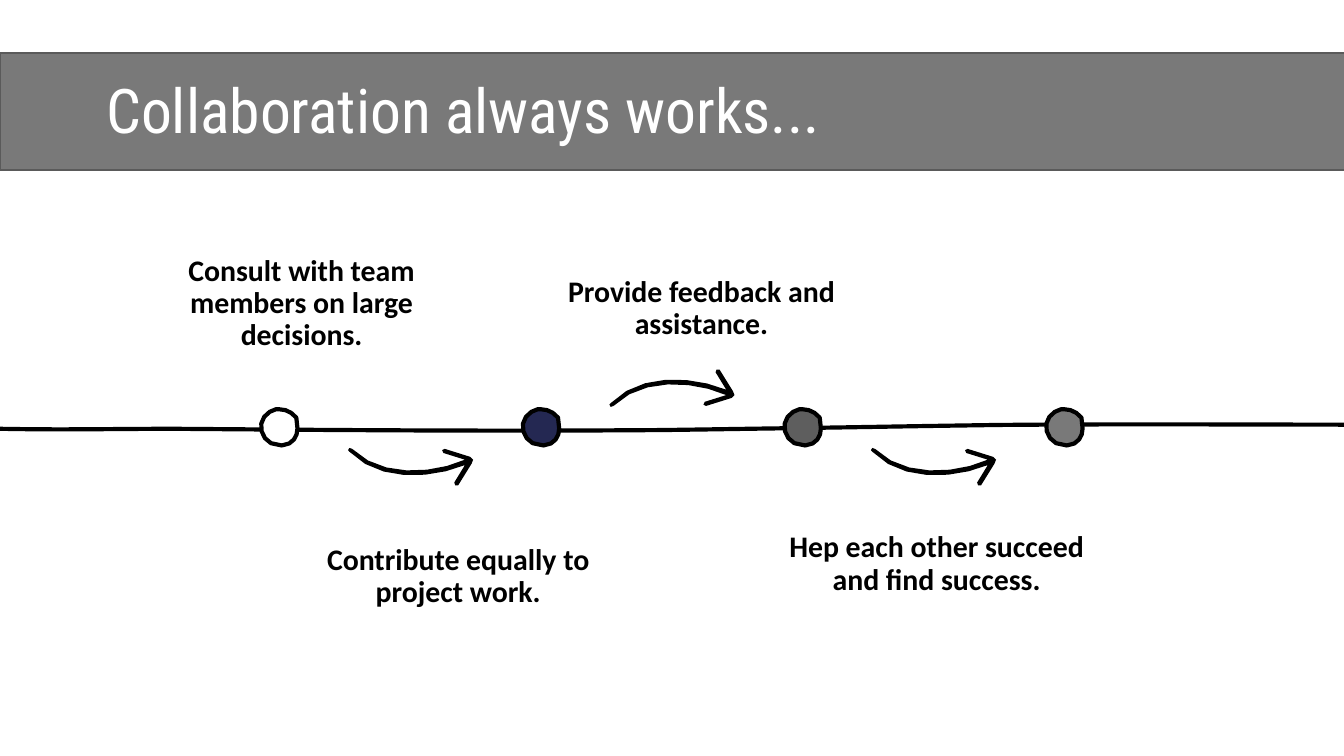
from dataclasses import dataclass
from math import dist

from pptx import Presentation
from pptx.dml.color import RGBColor
from pptx.enum.shapes import MSO_SHAPE
from pptx.enum.text import MSO_ANCHOR, MSO_AUTO_SIZE, PP_ALIGN
from pptx.shapes.autoshape import Shape
from pptx.slide import Slide
from pptx.util import Pt

Point = tuple[float, float]

COLORS = {
    "black": "000000",
    "white": "FFFFFF",
    "navy": "242852",
    "dark_gray": "5E5E5E",
    "gray": "797979",
    "bar_edge": "5A5A5A",
}

# An outline is a start point, then segments: one point is a straight line,
# three points are a Bezier curve. All coordinates are in points.
DOT_OUTLINE = [
    [(11.5, 1.1)],
    [(9.6, 1.1)],
    [(6.4, 1.7), (2.4, 4.9), (1.8, 8.8)],
    [(1.1, 12.8), (3.1, 17.3), (7, 19.3)],
    [(8.9, 19.9), (10.9, 20.5), (12.8, 20.5)],
    [(16.1, 19.9), (18, 19.3), (19.3, 17.3)],
    [(20.6, 16), (21.2, 13.4), (21.2, 11.4)],
    [(21.9, 9.5), (21.9, 6.9), (20.6, 5.6)],
    [(18, 2.4), (14.7, 1.1), (11.5, 1.1)],
]
ARROW_OUTLINE = [
    [(67, 6.5)],
    [(65.5, 5)],
    [(51.8, 0.7)],
    [(50.4, 1.4)],
    [(51.1, 2.9)],
    [(62.6, 6.5)],
    [(44.6, 14.4), (17.3, 15.8), (2.2, 0.7)],
    [(0.7, 0.2)],
    [(0, 1.4)],
    [(0.7, 2.2)],
    [(15.8, 18), (43.2, 17.3), (62.6, 9.4)],
    [(56.9, 18.7)],
    [(57.4, 20.2)],
    [(59, 20.2)],
    [(66.2, 8.6)],
]
TIMELINE_OUTLINE = [
    [(0, 229.7)],
    [(31, 230.4), (63.4, 229.7), (94.3, 229.7)],
    [(180.7, 230.4), (267.8, 231.1), (354.2, 230.4)],
    [(402.5, 229.7), (450.7, 229), (499, 228.2)],
    [(571.7, 226.8), (646.6, 227.5), (720, 227.5)],
]
STEP_LENGTH = 4
MOST_STEPS = 6
LINE_WIDTH = 2.25

DOT_COLORS = ["white", "navy", "dark_gray", "gray"]
DOT_LEFT, DOT_TOP, DOT_PITCH = 138.2, 218.2, 140.2

LABEL_FONT = {"name": "Calibri", "size": Pt(16), "bold": True}
TITLE_FONT = {"name": "Roboto Condensed", "size": Pt(33), "bold": False}


@dataclass(frozen=True)
class Label:
    text: str
    left: float
    top: float
    width: float = 191.5
    height: float = 56.2
    space_after: float = 0


@dataclass(frozen=True)
class Arrow:
    left: float
    top: float
    bends_up: bool = False


LABELS = [
    Label("Provide feedback and assistance.", 280.1, 141.1),
    Label("Contribute equally to project work.", 149.8, 284.4),
    Label("Hep each other succeed and find success.", 406.1, 277.9),
    Label("Consult with team members on large decisions.", 80.6, 129.6, 162, 75.6, 16),
]
ARROWS = [Arrow(186.5, 239.8), Arrow(466.6, 239.8), Arrow(326.5, 218.2, True)]


def color(name: str) -> RGBColor:
    return RGBColor.from_string(COLORS[name])


def flatten(outline: list[list[Point]]) -> list[Point]:
    """Turn lines and Bezier curves into a short list of vertices."""
    vertices = list(outline[0])
    for segment in outline[1:]:
        if len(segment) == 1:
            vertices += segment
            continue
        controls = [vertices[-1], *segment]
        steps = min(MOST_STEPS, max(1, round(dist(controls[0], controls[-1]) / STEP_LENGTH)))
        for step in range(1, steps + 1):
            t = step / steps
            weights = ((1 - t) ** 3, 3 * t * (1 - t) ** 2, 3 * t * t * (1 - t), t**3)
            x, y = (sum(w * c[axis] for w, c in zip(weights, controls)) for axis in (0, 1))
            vertices.append((x, y))
    return vertices


def add_outline(slide: Slide, vertices: list[Point], closed: bool) -> Shape:
    points = [(Pt(x), Pt(y)) for x, y in vertices]
    builder = slide.shapes.build_freeform(*points[0])
    builder.add_line_segments(points[1:], close=closed)
    shape = builder.convert_to_shape()
    shape.shadow.inherit = False
    return shape


def fill_shape(shape: Shape, color_name: str) -> None:
    shape.fill.solid()
    shape.fill.fore_color.rgb = color(color_name)


def draw_line(shape: Shape, color_name: str, width: float) -> None:
    shape.line.color.rgb = color(color_name)
    shape.line.width = Pt(width)


def add_timeline(slide: Slide) -> None:
    shape = add_outline(slide, flatten(TIMELINE_OUTLINE), closed=False)
    shape.fill.background()
    draw_line(shape, "black", LINE_WIDTH)


def add_dot(slide: Slide, left: float, fill: str) -> None:
    vertices = [(left + x, DOT_TOP + y) for x, y in flatten(DOT_OUTLINE)]
    shape = add_outline(slide, vertices, closed=True)
    fill_shape(shape, fill)
    draw_line(shape, "black", LINE_WIDTH)


def add_arrow(slide: Slide, arrow: Arrow) -> None:
    direction = -1 if arrow.bends_up else 1
    vertices = [(arrow.left + x, arrow.top + direction * y) for x, y in flatten(ARROW_OUTLINE)]
    shape = add_outline(slide, vertices, closed=True)
    fill_shape(shape, "black")
    shape.line.fill.background()


def write_text(shape: Shape, text: str, font: dict, color_name: str, align: PP_ALIGN) -> None:
    frame = shape.text_frame
    frame.word_wrap = True
    frame.auto_size = MSO_AUTO_SIZE.NONE
    frame.text = text
    paragraph = frame.paragraphs[0]
    paragraph.alignment = align
    paragraph.line_spacing = 0.9
    for attribute, value in font.items():
        setattr(paragraph.runs[0].font, attribute, value)
    paragraph.runs[0].font.color.rgb = color(color_name)


def add_label(slide: Slide, label: Label) -> None:
    box = slide.shapes.add_textbox(*map(Pt, (label.left, label.top, label.width, label.height)))
    write_text(box, label.text, LABEL_FONT, "black", PP_ALIGN.CENTER)
    for side in ("left", "top", "right", "bottom"):
        setattr(box.text_frame, f"margin_{side}", Pt(7.2))
    box.text_frame.paragraphs[0].space_after = Pt(label.space_after)


def add_title_bar(slide: Slide) -> None:
    title = slide.shapes.title
    bar = slide.shapes.add_shape(MSO_SHAPE.RECTANGLE, Pt(0), Pt(28.5), Pt(723), Pt(62.5))
    bar.shadow.inherit = False
    fill_shape(bar, "gray")
    draw_line(bar, "bar_edge", 1)
    title.element.addprevious(bar.element)

    title.left, title.top, title.width, title.height = map(Pt, (49.7, 21.6, 620.6, 78.5))
    write_text(title, "Collaboration always works...", TITLE_FONT, "white", PP_ALIGN.LEFT)
    title.text_frame.vertical_anchor = MSO_ANCHOR.MIDDLE


def main() -> None:
    presentation = Presentation()
    presentation.slide_width, presentation.slide_height = Pt(720), Pt(405)
    slide = presentation.slides.add_slide(presentation.slide_layouts.get_by_name("Title Only"))
    add_title_bar(slide)
    for label in LABELS:
        add_label(slide, label)
    add_timeline(slide)
    for index, fill in enumerate(DOT_COLORS):
        add_dot(slide, DOT_LEFT + index * DOT_PITCH, fill)
    for arrow in ARROWS:
        add_arrow(slide, arrow)
    presentation.save("out.pptx")


if __name__ == "__main__":
    main()
